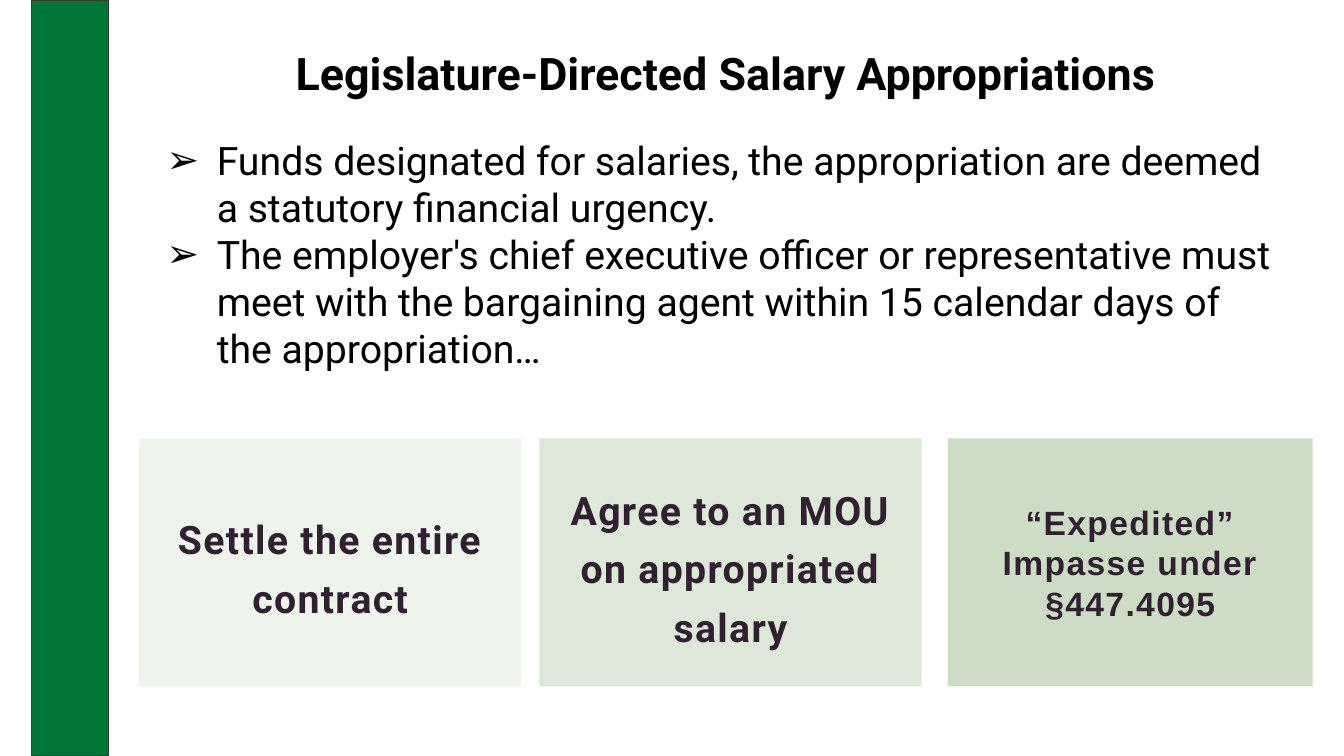
from lxml import etree
from pptx import Presentation
from pptx.dml.color import RGBColor
from pptx.enum.shapes import MSO_SHAPE
from pptx.enum.text import MSO_ANCHOR, MSO_AUTO_SIZE, PP_ALIGN
from pptx.oxml.ns import qn
from pptx.util import Inches, Pt

RECTANGLE = MSO_SHAPE.RECTANGLE
MIDDLE, TOP = MSO_ANCHOR.MIDDLE, MSO_ANCHOR.TOP
CENTER, LEFT = PP_ALIGN.CENTER, PP_ALIGN.LEFT
NO_AUTOFIT = MSO_AUTO_SIZE.NONE

WHITE = RGBColor(0xFF, 0xFF, 0xFF)
BLACK = RGBColor(0x00, 0x00, 0x00)
BAND_GREEN = RGBColor(0x00, 0x77, 0x36)
BAND_EDGE = RGBColor(0x35, 0x3E, 0x30)
OPTION_TEXT = RGBColor(0x30, 0x20, 0x30)
PALE_GREEN = RGBColor(0xEE, 0xF3, 0xEC)
LIGHT_GREEN = RGBColor(0xDD, 0xE8, 0xD8)
SOFT_GREEN = RGBColor(0xCC, 0xDC, 0xC5)

SLIDE_WIDTH, SLIDE_HEIGHT = 13.33, 7.5
CONTENT_LEFT, CONTENT_WIDTH = 1.38, 11.64
BULLET_INDENT = Inches(0.5)

TITLE = "Legislature-Directed Salary Appropriations"
RULES = [
    "Funds designated for salaries, the appropriation are deemed a statutory financial urgency.",
    "The employer's chief executive officer or representative must meet with the bargaining agent "
    "within 15 calendar days of the appropriation…",
]
OPTIONS = [
    ("Settle the entire contract", PALE_GREEN, 0, 3.79, "Roboto", 28, 1.25, 10),
    ("Agree to an MOU on appropriated salary", LIGHT_GREEN, 3.97, 3.79, "Roboto", 28, 1.25, 10),
    ("“Expedited” Impasse under §447.4095", SOFT_GREEN, 8.02, 3.62, "Arial", 24, 1.0, 0),
]


def place(shape, box):
    shape.left, shape.top, shape.width, shape.height = map(Inches, box)


def prepare_frame(shape, anchor):
    frame = shape.text_frame
    frame.word_wrap = True
    frame.auto_size = NO_AUTOFIT
    frame.vertical_anchor = anchor
    return frame


def style_paragraph(paragraph, font_name, size, color, bold=False, align=LEFT, line_spacing=1.0, after=0):
    paragraph.alignment = align
    paragraph.line_spacing = line_spacing
    paragraph.space_before = Pt(0)
    paragraph.space_after = Pt(after)
    for run in paragraph.runs:
        run.font.name = font_name
        run.font.size = Pt(size)
        run.font.bold = bold
        run.font.color.rgb = color


def add_bullet(paragraph):
    properties = paragraph._p.get_or_add_pPr()
    properties.set("marL", str(BULLET_INDENT))
    properties.set("indent", str(-BULLET_INDENT))
    etree.SubElement(properties, qn("a:buFont")).set("typeface", "Arial")
    etree.SubElement(properties, qn("a:buChar")).set("char", "➢")


def add_rectangle(slide, box, fill):
    shape = slide.shapes.add_shape(RECTANGLE, *map(Inches, box))
    shape.shadow.inherit = False
    shape.fill.solid()
    shape.fill.fore_color.rgb = fill
    shape.line.fill.background()
    return shape


def build_title(slide, box):
    title = slide.shapes.title
    place(title, box)
    frame = prepare_frame(title, MIDDLE)
    frame.text = TITLE
    style_paragraph(frame.paragraphs[0], "Roboto", 32, BLACK, True, CENTER, 0.9)


def build_rules(slide, box):
    body = slide.placeholders[1]
    place(body, box)
    frame = prepare_frame(body, TOP)
    frame.text = "\n".join(RULES)
    for paragraph in frame.paragraphs:
        add_bullet(paragraph)
        style_paragraph(paragraph, "Roboto", 28, BLACK)


def build_band(slide, box):
    band = add_rectangle(slide, box, BAND_GREEN)
    band.line.color.rgb = BAND_EDGE
    band.line.width = Pt(1)


def build_options(slide, box):
    left, top, _, height = box
    for text, fill, offset, width, font_name, size, line_spacing, after in OPTIONS:
        card = add_rectangle(slide, (left + offset, top, width, height), fill)
        frame = prepare_frame(card, MIDDLE)
        frame.text = text
        paragraph = frame.paragraphs[0]
        style_paragraph(paragraph, font_name, size, OPTION_TEXT, True, CENTER, line_spacing, after)
        for run in paragraph.runs:
            run.font._element.set("spc", "100")


def main():
    presentation = Presentation()
    presentation.slide_width = Inches(SLIDE_WIDTH)
    presentation.slide_height = Inches(SLIDE_HEIGHT)
    slide = presentation.slides.add_slide(presentation.slide_layouts[1])
    slide.background.fill.solid()
    slide.background.fill.fore_color.rgb = WHITE
    build_title(slide, (CONTENT_LEFT, 0.21, CONTENT_WIDTH, 1.08))
    build_band(slide, (0.31, 0, 0.77, SLIDE_HEIGHT))
    build_options(slide, (CONTENT_LEFT, 4.35, CONTENT_WIDTH, 2.46))
    build_rules(slide, (1.55, 1.3, 11.22, 2.46))
    presentation.save("out.pptx")


if __name__ == "__main__":
    main()
